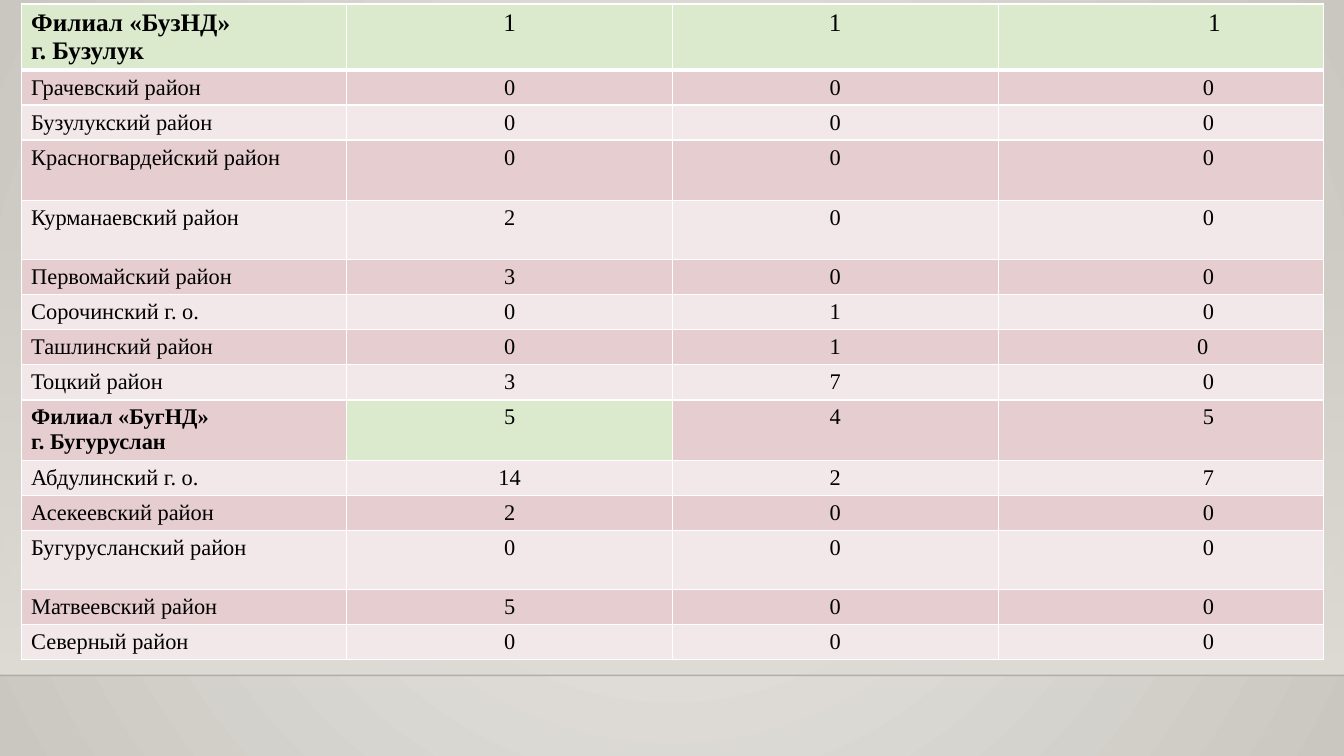
from dataclasses import dataclass

from lxml.etree import SubElement
from pptx import Presentation
from pptx.dml.color import RGBColor
from pptx.enum.shapes import MSO_CONNECTOR as Connector, MSO_SHAPE as Shape
from pptx.enum.text import PP_ALIGN as Align
from pptx.oxml import parse_xml
from pptx.oxml.ns import nsdecls, qn
from pptx.slide import Slide
from pptx.table import _Cell as Cell
from pptx.util import Inches, Pt

BLACK = RGBColor(0x00, 0x00, 0x00)
LINE_BLACK = RGBColor(0x00, 0x00, 0x01)
WHITE = RGBColor(0xFF, 0xFF, 0xFF)
GREEN = RGBColor(0xDB, 0xE9, 0xCD)
ROSE = RGBColor(0xE6, 0xCD, 0xCF)
PALE_ROSE = RGBColor(0xF3, 0xE8, 0xE9)
GLOW = RGBColor(0xEC, 0xEA, 0xE7)
STONE = RGBColor(0xCA, 0xC7, 0xC1)
WALL = RGBColor(0xDF, 0xDB, 0xD5)

WIDTH = 13.33
FLOOR_TOP = 6.7
COLUMN_WIDTH = 3.23
LINEAR_DOWN = '<a:lin ang="5400000" scaled="0"/>'
RADIAL = ('<a:path path="circle"><a:fillToRect l="50000" t="50000" '
          'r="50000" b="50000"/></a:path>')


@dataclass
class District:
    label: str
    values: tuple[int, int, int]
    height: float = 0.34
    size: int = 16
    bold: bool = False
    green_columns: tuple[int, ...] = ()
    last_margin: float = 1.04
    bottom_border: float = 1


DISTRICTS = [
    District("Филиал «БузНД»\nг. Бузулук", (1, 1, 1), 0.61, 18, True,
             (0, 1, 2, 3), 1.16, 3),
    District("Грачевский район", (0, 0, 0)),
    District("Бузулукский район", (0, 0, 0)),
    District("Красногвардейский район", (0, 0, 0), 0.6),
    District("Курманаевский район", (2, 0, 0), 0.59),
    District("Первомайский район", (3, 0, 0)),
    District("Сорочинский г. о.", (0, 1, 0)),
    District("Ташлинский район", (0, 1, 0), last_margin=0.93),
    District("Тоцкий район", (3, 7, 0)),
    District("Филиал «БугНД»\nг. Бугуруслан", (5, 4, 5), 0.6, bold=True,
             green_columns=(1,)),
    District("Абдулинский г. о.", (14, 2, 7)),
    District("Асекеевский район", (2, 0, 0)),
    District("Бугурусланский район", (0, 0, 0), 0.59),
    District("Матвеевский район", (5, 0, 0)),
    District("Северный район", (0, 0, 0)),
]


def set_gradient(owner, start: RGBColor, end: RGBColor, direction: str,
                 start_alpha: int = 100) -> None:
    current = owner.find(".//" + qn("a:gradFill"))
    current.getparent().replace(current, parse_xml(
        f'<a:gradFill rotWithShape="1" {nsdecls("a")}><a:gsLst>'
        f'<a:gs pos="0"><a:srgbClr val="{start}">'
        f'<a:alpha val="{start_alpha * 1000}"/></a:srgbClr></a:gs>'
        f'<a:gs pos="100000"><a:srgbClr val="{end}"/></a:gs>'
        f'</a:gsLst>{direction}</a:gradFill>'))


def draw_backdrop(slide: Slide) -> None:
    slide.background.fill.gradient()
    set_gradient(slide.element, GLOW, STONE, RADIAL)

    wall = slide.shapes.add_shape(
        Shape.RECTANGLE, 0, Inches(2.21), Inches(WIDTH), Inches(4.49))
    wall.shadow.inherit = False
    wall.line.fill.background()
    wall.fill.gradient()
    set_gradient(wall.element, WALL, WALL, LINEAR_DOWN, 0)

    floor_line = slide.shapes.add_connector(
        Connector.STRAIGHT, 0, Inches(FLOOR_TOP), Inches(WIDTH), Inches(FLOOR_TOP))
    floor_line.line.width = Pt(1)
    floor_line.line.color.rgb = LINE_BLACK
    color = floor_line.element.find(".//" + qn("a:srgbClr"))
    SubElement(color, qn("a:alpha"), val="20000")
    SubElement(floor_line.element.spPr, qn("a:effectLst"))


def set_borders(cell: Cell, widths: dict[str, float]) -> None:
    properties = cell._tc.get_or_add_tcPr()
    for side, width in widths.items():
        properties.append(parse_xml(
            f'<a:ln{side} w="{Pt(width)}" {nsdecls("a")}><a:solidFill>'
            f'<a:srgbClr val="{WHITE}"/></a:solidFill></a:ln{side}>'))


def fill_cell(cell: Cell, text: str, color: RGBColor, align: Align,
              font_format: dict) -> None:
    cell.text = text
    cell.fill.solid()
    cell.fill.fore_color.rgb = color
    for paragraph in cell.text_frame.paragraphs:
        paragraph.alignment = align
        for run in paragraph.runs:
            run.font.color.rgb = BLACK
            for name, value in font_format.items():
                setattr(run.font, name, value)


def draw_table(slide: Slide) -> None:
    columns = 4
    height = sum(district.height for district in DISTRICTS)
    table = slide.shapes.add_table(
        len(DISTRICTS), columns, Inches(0.21), Inches(0.04),
        Inches(COLUMN_WIDTH * columns), Inches(height)).table
    table.first_row = False
    table.horz_banding = False
    for column in table.columns:
        column.width = Inches(COLUMN_WIDTH)

    top_border = 1
    for row, district in enumerate(DISTRICTS):
        table.rows[row].height = Inches(district.height)
        band = ROSE if row % 2 else PALE_ROSE
        for column, content in enumerate((district.label, *district.values)):
            cell = table.cell(row, column)
            set_borders(cell, {"L": 1, "R": 1, "T": top_border,
                               "B": district.bottom_border})
            fill_cell(
                cell, str(content),
                GREEN if column in district.green_columns else band,
                Align.CENTER if column else Align.LEFT,
                {"name": "Times New Roman", "size": Pt(district.size),
                 "bold": district.bold and column == 0})
        table.cell(row, columns - 1).margin_left = Inches(district.last_margin)
        top_border = district.bottom_border


def main() -> None:
    presentation = Presentation()
    presentation.slide_width = Inches(WIDTH)
    presentation.slide_height = Inches(7.5)
    slide = presentation.slides.add_slide(presentation.slide_layouts[6])
    draw_backdrop(slide)
    draw_table(slide)
    presentation.save("out.pptx")


if __name__ == "__main__":
    main()
